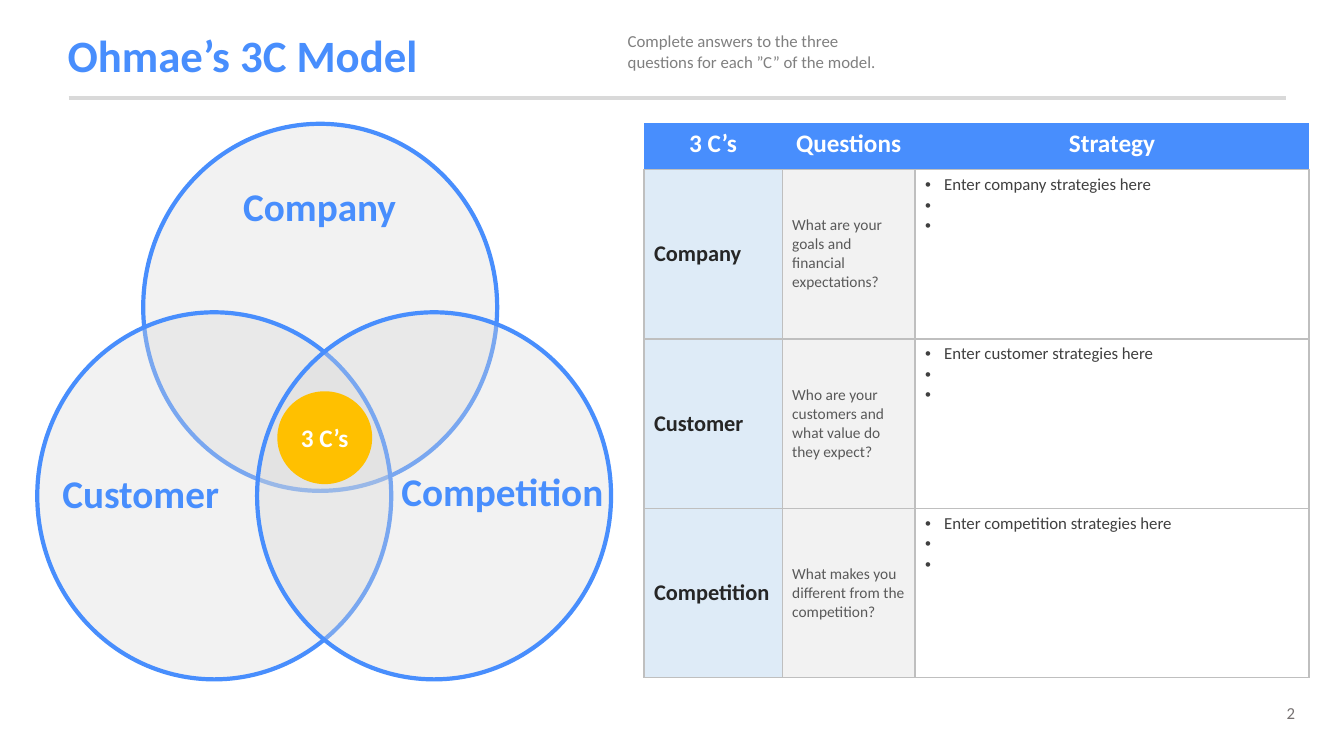
import pptx
import pptx.util
import pptx.dml.color
import pptx.enum.shapes
import pptx.enum.text
import pptx.oxml
import pptx.oxml.ns
from lxml import etree

Cm, Pt = pptx.util.Cm, pptx.util.Pt
ALIGN = pptx.enum.text.PP_ALIGN
MID = pptx.enum.text.MSO_ANCHOR.MIDDLE
TOP = pptx.enum.text.MSO_ANCHOR.TOP
OVAL = pptx.enum.shapes.MSO_SHAPE.OVAL
qn = pptx.oxml.ns.qn

FONT = "Calibri"
HUES = {
    "blue": "488EFD", "gold": "FFC000", "white": "FFFFFF", "ring": "D9D9D9",
    "edge": "BFBFBF", "pale": "DEEBF7", "light": "F2F2F2", "ink": "262626",
    "body": "404040", "ask": "595959", "note": "808080", "page": "767171",
}
ROWS = [
    ("Company", "What are your goals and financial expectations?",
     "Enter company strategies here"),
    ("Customer", "Who are your customers and what value do they expect?",
     "Enter customer strategies here"),
    ("Competition", "What makes you different from the competition?",
     "Enter competition strategies here"),
]


def hue(name):
    return pptx.dml.color.RGBColor.from_string(HUES[name])


def write(frame, text, size, color, bold=False, align=ALIGN.LEFT):
    frame.text = text
    for para in frame.paragraphs:
        para.alignment = align
        for run in para.runs:
            font = run.font
            font.name, font.size, font.bold = FONT, Pt(size), bold
            font.color.rgb = hue(color)


def label(slide, box, *style, **more):
    frame = slide.shapes.add_textbox(*map(Cm, box)).text_frame
    frame.word_wrap = True
    write(frame, *style, **more)


def disc(slide, box, color, alpha=None, line=None):
    shape = slide.shapes.add_shape(OVAL, *map(Cm, box))
    shape.shadow.inherit = False
    shape.fill.solid()
    shape.fill.fore_color.rgb = hue(color)
    if alpha:
        tint = shape.fill._xPr.find(".//" + qn("a:srgbClr"))
        etree.SubElement(tint, qn("a:alpha"), val=str(alpha * 1000))
    if line:
        shape.line.color.rgb = hue(line)
        shape.line.width = Pt(3)
    else:
        shape.line.fill.background()
    return shape


def border(cell, sides, color=None):
    props = cell._tc.get_or_add_tcPr()
    for side in sides:
        line = etree.SubElement(props, qn("a:ln" + side), w=str(Pt(1)))
        if color:
            fill = etree.SubElement(line, qn("a:solidFill"))
            etree.SubElement(fill, qn("a:srgbClr"), val=HUES[color])
        else:
            etree.SubElement(line, qn("a:noFill"))


def bullet(para):
    props = para._p.get_or_add_pPr()
    props.set("marL", str(Cm(0.48)))
    props.set("indent", str(-Cm(0.48)))
    etree.SubElement(props, qn("a:buFont"), typeface="Arial")
    etree.SubElement(props, qn("a:buChar"), char="•")


def header(slide, box):
    left, top, width, height = box
    # Title
    title = slide.shapes.title
    title.left, title.top = Cm(left - 0.28), Cm(top)
    title.width, title.height = Cm(27.79), Cm(1.96)
    write(title.text_frame, "Ohmae’s 3C Model", 32, "blue", True)
    title.text_frame.vertical_anchor = MID
    title.text_frame.paragraphs[0].line_spacing = 0.9
    # Hint
    label(slide, (left + 13.84, top + 0.18, 7.11, 1.27),
          "Complete answers to the three questions for each ”C” of the model.",
          12, "note")
    # Rule below
    base = Cm(top + height)
    rule = slide.shapes.add_connector(
        pptx.enum.shapes.MSO_CONNECTOR.STRAIGHT,
        Cm(left), base, Cm(left + width), base)
    rule.line.color.rgb = hue("ring")
    rule.line.width = Pt(3)
    etree.SubElement(rule._element.spPr, qn("a:effectLst"))


def venn(slide, box):
    left, top, width, height = box
    wide, tall = 8.92, 9.25
    low, right = height - tall, width - wide
    # Circles
    for x, y in ((2.67, 0), (0, low), (right, low)):
        disc(slide, (left + x, top + y, wide, tall), "ring", 34, "blue")
    # Names
    spots = ((3.99, 1.35, 6.25), (0.18, 8.59, 4.85), (8.81, 8.54, 5.82))
    for (name, _, _), (x, y, span) in zip(ROWS, spots):
        label(slide, (left + x, top + y, span, 1.32),
              name, 28, "blue", True, ALIGN.CENTER)
    # Core
    core = disc(slide, (left + 6.05, top + 6.74, 2.39, 2.34), "gold")
    write(core.text_frame, "3 C’s", 18, "white", True, ALIGN.CENTER)
    core.text_frame.word_wrap = False
    core.text_frame.vertical_anchor = MID


def grid(slide, box):
    table = slide.shapes.add_table(4, 3, *map(Cm, box)).table
    table.horz_banding = False
    head = 1.17
    for col, width in zip(table.columns, (3.48, 3.35, box[2] - 6.83)):
        col.width = Cm(width)
    for i, row in enumerate(table.rows):
        row.height = Cm((box[3] - head) / 3 if i else head)

    def put(row, col, text, fill, anchor, *style):
        cell = table.cell(row, col)
        if row:
            border(cell, "LRTB", "edge")
        else:
            border(cell, "LRT")
            border(cell, "B", "edge")
        cell.fill.solid()
        cell.fill.fore_color.rgb = hue(fill)
        cell.vertical_anchor = anchor
        write(cell.text_frame, text, *style)
        return cell

    # Head row
    for col, text in enumerate(("3 C’s", "Questions", "Strategy")):
        put(0, col, text, "blue", TOP, 18, "white", True, ALIGN.CENTER)
    # Body rows
    for row, (name, ask, plan) in enumerate(ROWS, 1):
        put(row, 0, name, "pale", MID, 16, "ink", True)
        put(row, 1, ask, "light", MID, 11, "ask")
        cell = put(row, 2, plan + "\n \n ", "white", TOP, 12, "body")
        for para in cell.text_frame.paragraphs:
            bullet(para)


def main():
    deck = pptx.Presentation()
    deck.slide_width, deck.slide_height = Cm(33.87), Cm(19.05)
    slide = deck.slides.add_slide(deck.slide_layouts[5])
    header(slide, (1.73, 0.48, 30.68, 1.98))
    venn(slide, (0.94, 3.12, 14.46, 14))
    grid(slide, (16.23, 3.1, 16.76, 13.98))
    # Page number
    label(slide, (30.3, 17.58, 2.59, 0.76), "2", 12, "page", align=ALIGN.RIGHT)
    deck.save("out.pptx")


if __name__ == "__main__":
    main()
